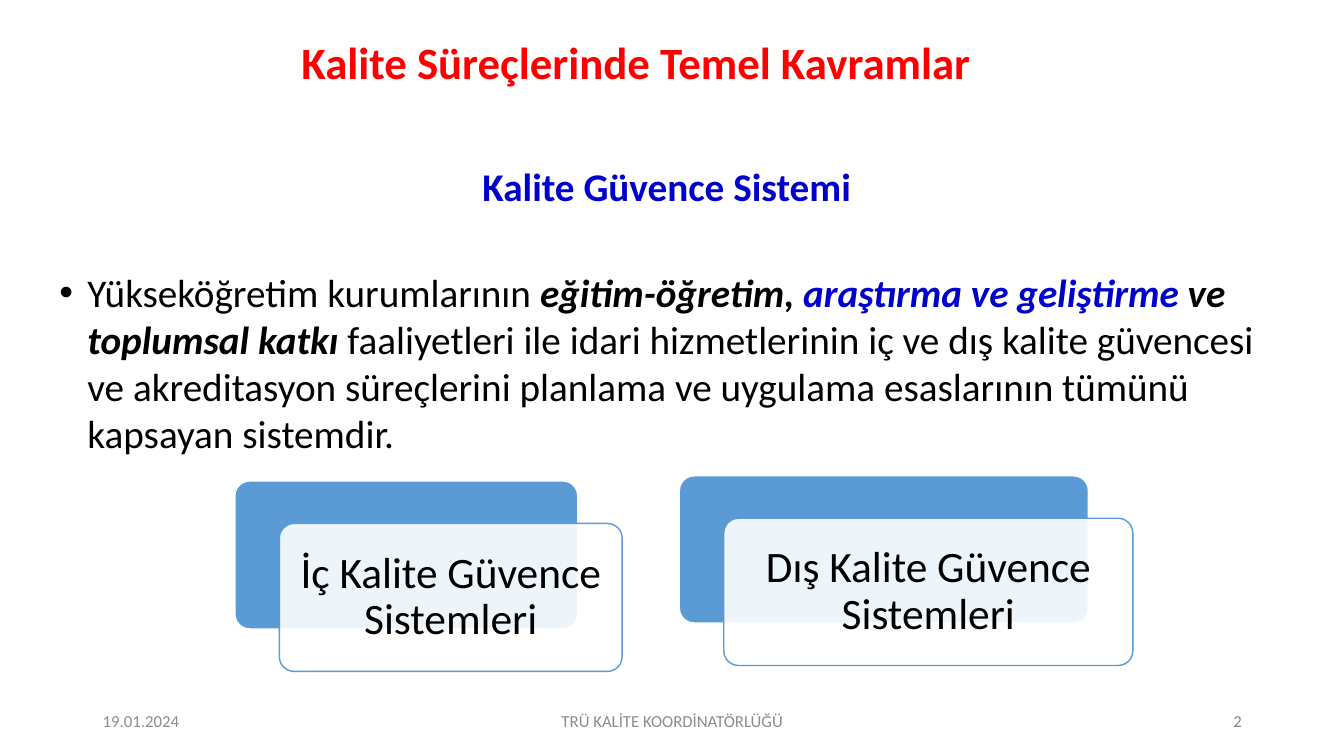
from lxml.etree import SubElement
from pptx import Presentation
from pptx.dml.color import RGBColor
from pptx.enum.shapes import MSO_SHAPE
from pptx.enum.text import MSO_ANCHOR, MSO_AUTO_SIZE, PP_ALIGN
from pptx.oxml.ns import qn
from pptx.util import Cm, Pt

RED = RGBColor(0xFF, 0x00, 0x00)
BLUE = RGBColor(0x00, 0x00, 0xCC)
BLACK = RGBColor(0x00, 0x00, 0x00)
WHITE = RGBColor(0xFF, 0xFF, 0xFF)
CARD_BLUE = RGBColor(0x5B, 0x9B, 0xD5)
GREY = RGBColor(0x8C, 0x8C, 0x8C)
NUMBER_GREY = RGBColor(0x89, 0x89, 0x89)
FONT = "Calibri"


def write(paragraph, text, size=28, color=BLACK, bold=False, italic=False,
          align=PP_ALIGN.LEFT, line_spacing=1.0, after=0):
    """Append one formatted run and set the paragraph's format."""
    paragraph.alignment = align
    paragraph.line_spacing = line_spacing
    paragraph.space_before = Pt(0)
    paragraph.space_after = Pt(after)
    run = paragraph.add_run()
    run.text = text
    run.font.name = FONT
    run.font.size = Pt(size)
    run.font.bold = bold
    run.font.italic = italic
    run.font.color.rgb = color


def place(shape, left, top, width, height):
    shape.left, shape.top = Cm(left), Cm(top)
    shape.width, shape.height = Cm(width), Cm(height)


def set_bullet(paragraph, char=None, indent=0.0):
    """Give the paragraph a hanging bullet, or none without a character."""
    properties = paragraph._p.get_or_add_pPr()
    properties.set("marL", str(Cm(indent)))
    properties.set("indent", str(-Cm(indent)))
    if char:
        SubElement(properties, qn("a:buFont")).set("typeface", "Arial")
        SubElement(properties, qn("a:buChar")).set("char", char)
    else:
        SubElement(properties, qn("a:buNone"))


def fill_title(title, *box):
    place(title, *box)
    frame = title.text_frame
    frame.auto_size = MSO_AUTO_SIZE.NONE
    frame.vertical_anchor = MSO_ANCHOR.MIDDLE
    write(frame.paragraphs[0], "Kalite Süreçlerinde Temel Kavramlar",
          size=32, color=RED, bold=True, line_spacing=0.9)


def fill_definition(body, *box):
    place(body, *box)
    frame = body.text_frame
    frame.auto_size = MSO_AUTO_SIZE.NONE
    frame.vertical_anchor = MSO_ANCHOR.TOP
    heading = frame.paragraphs[0]
    set_bullet(heading)
    write(heading, "Kalite Güvence Sistemi", color=BLUE, bold=True,
          align=PP_ALIGN.CENTER, after=42)
    definition = frame.add_paragraph()
    set_bullet(definition, "•", 0.71)
    emphasis = {"bold": True, "italic": True}
    for text, style in [
        ("Yükseköğretim kurumlarının ", {}),
        ("eğitim-öğretim, ", emphasis),
        ("araştırma ve geliştirme ", {**emphasis, "color": BLUE}),
        ("ve toplumsal katkı ", emphasis),
        ("faaliyetleri ile idari hizmetlerinin iç ve dış kalite güvencesi ve "
         "akreditasyon süreçlerini planlama ve uygulama esaslarının tümünü "
         "kapsayan sistemdir.", {}),
    ]:
        write(definition, text, after=4, **style)


def add_panel(slide, fill, line, left, top, width, height):
    panel = slide.shapes.add_shape(MSO_SHAPE.ROUNDED_RECTANGLE, Cm(left),
                                   Cm(top), Cm(width), Cm(height))
    panel.shadow.inherit = False
    panel.adjustments[0] = 0.1
    panel.fill.solid()
    panel.fill.fore_color.rgb = fill
    panel.line.color.rgb = line
    panel.line.width = Pt(1)
    return panel


def add_system_card(slide, text, left, top, width, height):
    """Draw a blue panel with a translucent, labelled panel offset over it."""
    add_panel(slide, CARD_BLUE, WHITE, left, top, width, height)
    front = add_panel(slide, WHITE, CARD_BLUE, left + 1.12, top + 1.07,
                      width, height)
    color = front._element.spPr.find(qn("a:solidFill"))[0]
    SubElement(color, qn("a:alpha")).set("val", "90000")
    frame = front.text_frame
    frame.word_wrap = True
    frame.vertical_anchor = MSO_ANCHOR.MIDDLE
    frame.margin_left = frame.margin_right = Cm(0.33)
    frame.margin_top = frame.margin_bottom = Cm(0.33)
    write(frame.paragraphs[0], text, size=31, align=PP_ALIGN.CENTER,
          line_spacing=0.9)


def add_footer(slide, left, top, height):
    for text, offset, width, align, color in [
        ("19.01.2024", 0, 7.62, PP_ALIGN.LEFT, GREY),
        ("TRÜ KALİTE KOORDİNATÖRLÜĞÜ", 8.89, 11.43, PP_ALIGN.CENTER, GREY),
        ("2", 21.59, 7.62, PP_ALIGN.RIGHT, NUMBER_GREY),
    ]:
        frame = slide.shapes.add_textbox(Cm(left + offset), Cm(top), Cm(width),
                                         Cm(height)).text_frame
        frame.word_wrap = True
        frame.vertical_anchor = MSO_ANCHOR.MIDDLE
        write(frame.paragraphs[0], text, size=12, color=color, align=align)


def main():
    deck = Presentation()
    deck.slide_width, deck.slide_height = Cm(33.87), Cm(19.05)
    slide = deck.slides.add_slide(deck.slide_layouts[1])
    fill_title(slide.shapes.title, 7.34, 0.76, 21.03, 1.75)
    fill_definition(slide.placeholders[1], 1.24, 3.96, 31.12, 7.75)
    add_footer(slide, 2.34, 17.65, 1.02)
    add_system_card(slide, "İç Kalite Güvence Sistemleri",
                    5.92, 12.12, 8.64, 3.73)
    add_system_card(slide, "Dış Kalite Güvence Sistemleri",
                    17.12, 11.99, 10.31, 3.71)
    deck.save("out.pptx")


if __name__ == "__main__":
    main()
